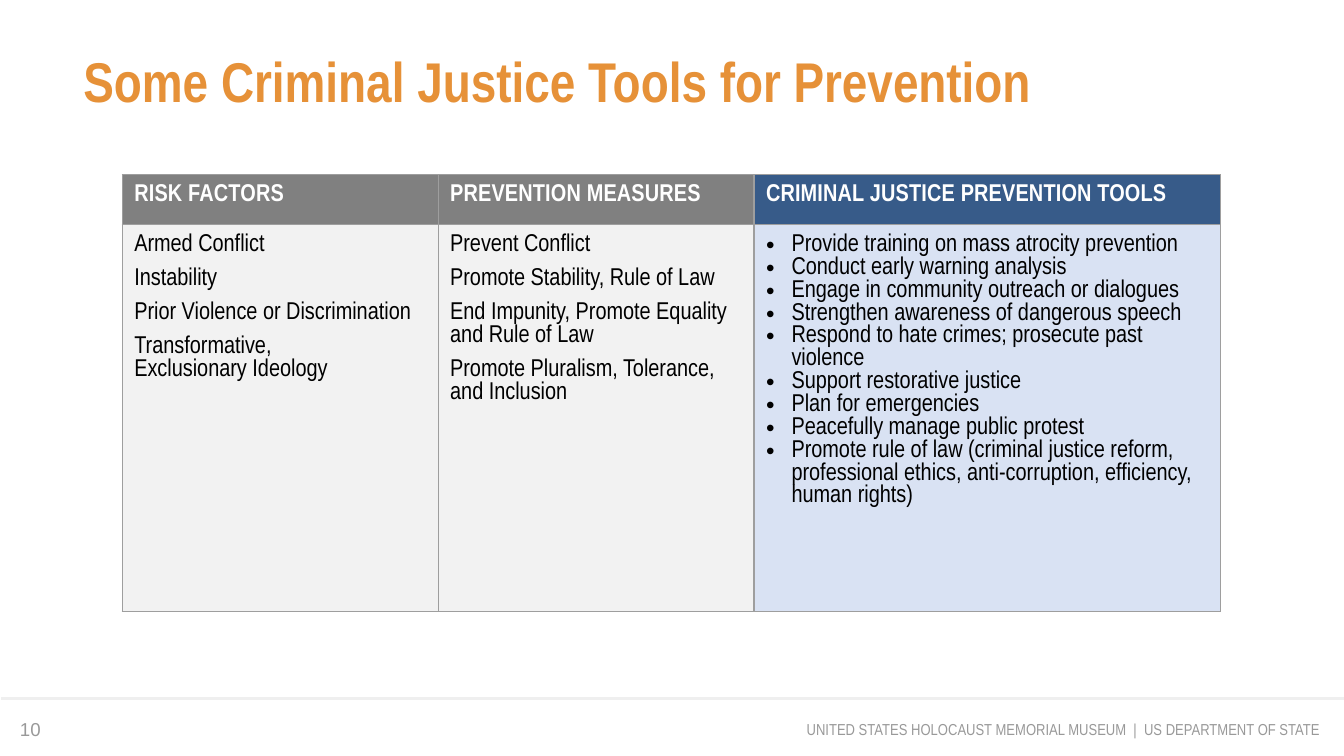
from copy import deepcopy
from dataclasses import dataclass

from lxml import etree
from pptx import Presentation, util as u
from pptx.dml.color import RGBColor
from pptx.enum import shapes, text
from pptx.oxml.ns import qn

COLORS = {
    "title": "E69138", "footer": "999999", "rule": "EFEFEF", "border": "9E9E9E",
    "white": "FFFFFF", "black": "000000", "gray": "808080", "blue": "375B89",
    "pale_gray": "F2F2F2", "pale_blue": "D9E2F3",
}
NARROW = "Arial Narrow"
SLIDE_WIDTH = u.Inches(10)
SLIDE_HEIGHT = SLIDE_WIDTH * 9 // 16  # widescreen


@dataclass
class Style:
    size: float
    color: str
    bold: bool = False
    font: str = NARROW
    tracking: int = 0  # hundredths of a point


@dataclass
class Label:
    words: str
    box: tuple[float, float, float, float]
    style: Style
    inset: float = 0.1
    anchor: text.MSO_ANCHOR = text.MSO_ANCHOR.TOP
    align: text.PP_ALIGN = text.PP_ALIGN.LEFT


@dataclass
class Column:
    width: float
    heading: str
    items: list[str]
    heading_fill: str = "gray"
    body_fill: str = "pale_gray"
    bulleted: bool = False


HEADING = Style(13, "white", bold=True, tracking=10)
BODY = Style(13, "black")

LABELS = [
    Label("UNITED STATES HOLOCAUST MEMORIAL MUSEUM  |  US DEPARTMENT OF STATE",
          (5.18, 5.21, 4.74, 0.43), Style(8.5, "footer"),
          anchor=text.MSO_ANCHOR.MIDDLE, align=text.PP_ALIGN.RIGHT),
    Label("Some Criminal Justice Tools for Prevention",
          (0.62, 0.35, 8.75, 0.54), Style(30, "title", bold=True), inset=0),
    Label("10", (0.05, 5.16, 0.78, 0.43), Style(10, "footer", font="Arial"),
          anchor=text.MSO_ANCHOR.BOTTOM),
]

COLUMNS = [
    Column(2.35, "RISK FACTORS", [
        "Armed Conflict",
        "Instability",
        "Prior Violence or Discrimination",
        "Transformative, \nExclusionary Ideology",
    ]),
    Column(2.35, "PREVENTION MEASURES", [
        "Prevent Conflict",
        "Promote Stability, Rule of Law",
        "End Impunity, Promote Equality and Rule of Law",
        "Promote Pluralism, Tolerance, and Inclusion",
    ]),
    Column(3.47, "CRIMINAL JUSTICE PREVENTION TOOLS", [
        "Provide training on mass atrocity prevention",
        "Conduct early warning analysis",
        "Engage in community outreach or dialogues",
        "Strengthen awareness of dangerous speech",
        "Respond to hate crimes; prosecute past violence",
        "Support restorative justice",
        "Plan for emergencies",
        "Peacefully manage public protest",
        "Promote rule of law (criminal justice reform, professional ethics, "
        "anti-corruption, efficiency, human rights)",
    ], "blue", "pale_blue", bulleted=True),
]
ROW_HEIGHTS = (0.37, 2.88)


def rgb(name: str) -> RGBColor:
    return RGBColor.from_string(COLORS[name])


def set_all(target, values: dict) -> None:
    for name, value in values.items():
        setattr(target, name, value)


def write(paragraph, words: str, style: Style) -> None:
    paragraph.text = words
    for run in paragraph.runs:
        set_all(run.font, {"name": style.font, "size": u.Pt(style.size), "bold": style.bold})
        run.font.color.rgb = rgb(style.color)
        if style.tracking:
            run._r.get_or_add_rPr().set("spc", str(style.tracking))
    # Line breaks take the size of the text around them
    for line_break in paragraph._p.findall(qn("a:br")):
        line_break.append(deepcopy(paragraph.runs[0]._r.rPr))


def add_label(slide, label: Label) -> None:
    frame = slide.shapes.add_textbox(*map(u.Inches, label.box)).text_frame
    inset = u.Inches(label.inset)
    set_all(frame, {"word_wrap": True, "vertical_anchor": label.anchor,
                    "margin_left": inset, "margin_right": inset,
                    "margin_top": inset, "margin_bottom": inset})
    frame.paragraphs[0].alignment = label.align
    write(frame.paragraphs[0], label.words, label.style)


def add_bullet(paragraph) -> None:
    properties = paragraph._p.get_or_add_pPr()
    indent = u.Inches(0.19)
    properties.set("marL", str(indent))
    properties.set("indent", str(-indent))
    color = etree.SubElement(properties, qn("a:buClr"))
    etree.SubElement(color, qn("a:srgbClr"), val=COLORS["black"])
    etree.SubElement(properties, qn("a:buFont"), typeface="Arial")
    etree.SubElement(properties, qn("a:buChar"), char="•")


def fill_cell(cell, items: list[str], style: Style, fill: str,
              bulleted: bool = False, space_after: float = 0) -> None:
    set_all(cell, {"margin_left": u.Inches(0.09), "margin_right": u.Inches(0.09),
                   "margin_top": u.Inches(0.07), "margin_bottom": u.Inches(0.07)})
    # Borders come before the fill in the cell properties
    properties = cell._tc.get_or_add_tcPr()
    for side in ("lnL", "lnR", "lnT", "lnB"):
        line = etree.SubElement(properties, qn(f"a:{side}"), w=str(u.Pt(0.75)))
        solid = etree.SubElement(line, qn("a:solidFill"))
        etree.SubElement(solid, qn("a:srgbClr"), val=COLORS["border"])
    cell.fill.solid()
    cell.fill.fore_color.rgb = rgb(fill)

    frame = cell.text_frame
    for index, words in enumerate(items):
        paragraph = frame.add_paragraph() if index else frame.paragraphs[0]
        paragraph.space_after = u.Pt(space_after)
        if bulleted:
            add_bullet(paragraph)
        write(paragraph, words, style)


def add_tools_table(slide, columns: list[Column]) -> None:
    width = sum(column.width for column in columns)
    table = slide.shapes.add_table(
        len(ROW_HEIGHTS), len(columns), u.Inches(0.91), u.Inches(1.3),
        u.Inches(width), u.Inches(sum(ROW_HEIGHTS))).table
    set_all(table, {"first_row": False, "horz_banding": False})
    for row, height in zip(table.rows, ROW_HEIGHTS):
        row.height = u.Inches(height)
    for index, column in enumerate(columns):
        table.columns[index].width = u.Inches(column.width)
        fill_cell(table.cell(0, index), [column.heading], HEADING, column.heading_fill)
        fill_cell(table.cell(1, index), column.items, BODY, column.body_fill,
                  column.bulleted, 0 if column.bulleted else 6)


def add_footer_rule(slide) -> None:
    rule = slide.shapes.add_connector(
        shapes.MSO_CONNECTOR.STRAIGHT,
        u.Inches(0.01), u.Inches(5.2), u.Inches(10), u.Inches(5.2))
    rule.line.color.rgb = rgb("rule")
    rule.line.width = u.Pt(1.5)
    etree.SubElement(rule._element.spPr, qn("a:effectLst"))


def main() -> None:
    presentation = Presentation()
    set_all(presentation, {"slide_width": SLIDE_WIDTH, "slide_height": SLIDE_HEIGHT})
    slide = presentation.slides.add_slide(presentation.slide_layouts[6])

    # Footer rule, title, footer and page number
    add_footer_rule(slide)
    for label in LABELS:
        add_label(slide, label)

    # Risk factors, measures and tools
    add_tools_table(slide, COLUMNS)
    presentation.save("out.pptx")


if __name__ == "__main__":
    main()
